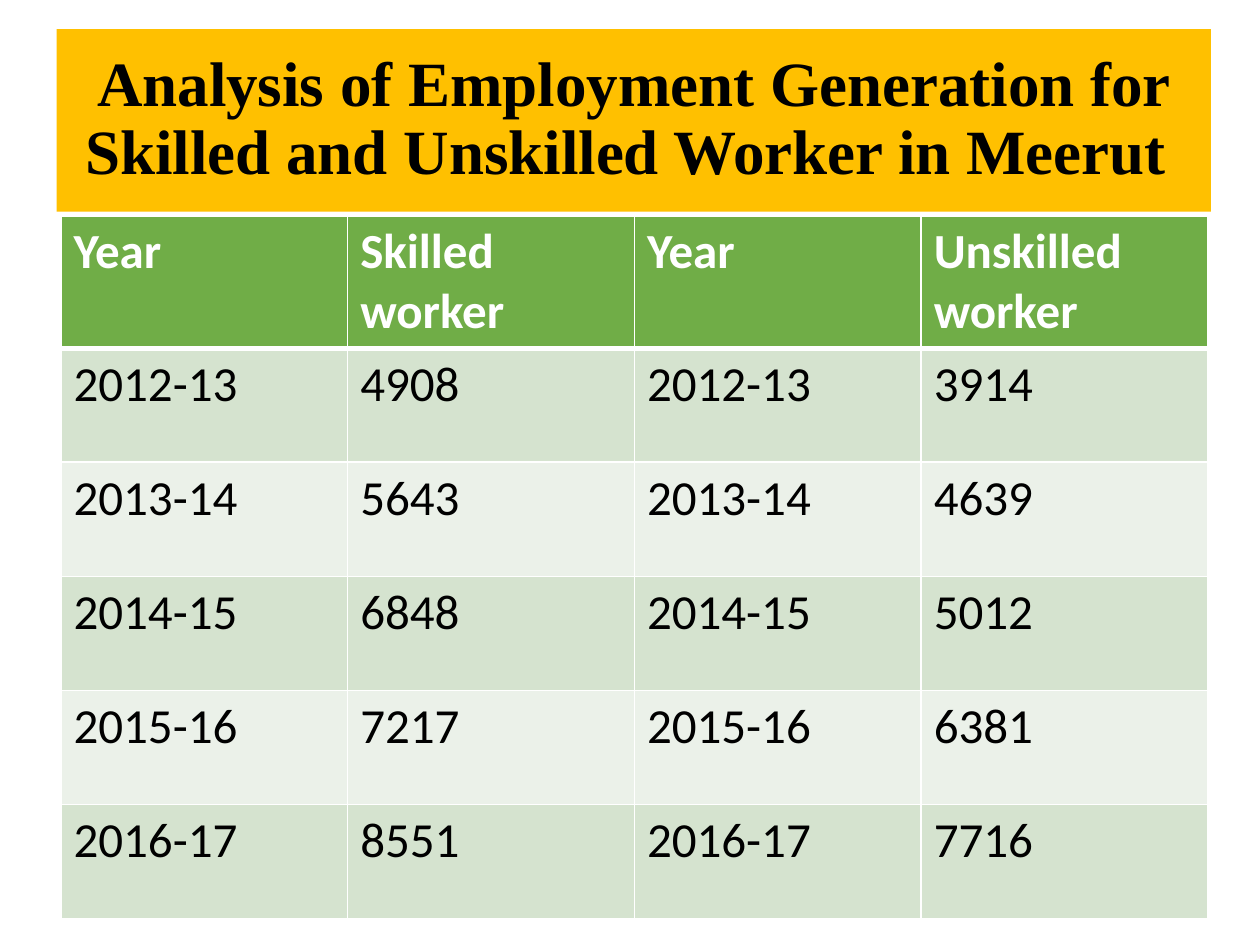
from lxml.etree import SubElement
from pptx import Presentation
from pptx.dml.color import RGBColor
from pptx.enum.shapes import MSO_SHAPE
from pptx.enum.text import MSO_ANCHOR, PP_ALIGN
from pptx.oxml.ns import qn
from pptx.util import Cm, Pt

AMBER = RGBColor(0xFF, 0xC0, 0x00)
GREEN = RGBColor(0x70, 0xAD, 0x47)
BAND_DARK = RGBColor(0xD5, 0xE3, 0xCF)
BAND_LIGHT = RGBColor(0xEB, 0xF1, 0xE9)
BLACK = RGBColor(0x00, 0x00, 0x00)
WHITE = RGBColor(0xFF, 0xFF, 0xFF)

TITLE = "Analysis of Employment Generation for Skilled and Unskilled Worker in Meerut "
HEADINGS = ["Year", "Skilled worker", "Year", "Unskilled worker"]
WORKERS_BY_YEAR = [
    ("2012-13", 4908, 3914),
    ("2013-14", 5643, 4639),
    ("2014-15", 6848, 5012),
    ("2015-16", 7217, 6381),
    ("2016-17", 8551, 7716),
]


class SlideBuilder:
    title_font, title_size = "Times New Roman", Pt(36)
    table_font, table_size = "Calibri", Pt(28)
    thin_line, heavy_line = Pt(1), Pt(3)

    def __init__(self, slide):
        self.slide = slide

    def style_font(self, paragraph, name, size, color, bold):
        font = paragraph.font
        font.name, font.size, font.bold = name, size, bold
        font.color.rgb = color

    def add_title(self, text, left, top, width, height):
        banner = self.slide.shapes.add_shape(MSO_SHAPE.RECTANGLE, left, top, width, height)
        banner.shadow.inherit = False
        banner.fill.solid()
        banner.fill.fore_color.rgb = AMBER
        banner.line.fill.background()
        frame = banner.text_frame
        frame.word_wrap = True
        frame.vertical_anchor = MSO_ANCHOR.MIDDLE
        paragraph = frame.paragraphs[0]
        paragraph.text = text
        paragraph.alignment = PP_ALIGN.CENTER
        paragraph.line_spacing = 0.9
        self.style_font(paragraph, self.title_font, self.title_size, BLACK, True)

    def add_table(self, rows, left, top, column_width, header_height, row_height):
        column_count = len(rows[0])
        height = header_height + row_height * (len(rows) - 1)
        table = self.slide.shapes.add_table(
            len(rows), column_count, left, top, column_width * column_count, height
        ).table
        for column in table.columns:
            column.width = column_width
        for row_index, values in enumerate(rows):
            table.rows[row_index].height = row_height if row_index else header_height
            for column_index, value in enumerate(values):
                self.fill_cell(table.cell(row_index, column_index), str(value), row_index)

    def fill_cell(self, cell, text, row_index):
        is_header = row_index == 0
        self.add_borders(
            cell,
            top=self.heavy_line if row_index == 1 else self.thin_line,
            bottom=self.heavy_line if is_header else self.thin_line,
        )
        band = BAND_DARK if row_index % 2 else BAND_LIGHT
        cell.fill.solid()
        cell.fill.fore_color.rgb = GREEN if is_header else band
        paragraph = cell.text_frame.paragraphs[0]
        paragraph.text = text
        color = WHITE if is_header else BLACK
        self.style_font(paragraph, self.table_font, self.table_size, color, is_header)

    def add_borders(self, cell, top, bottom):
        """Draw white cell edges; call before filling, as the schema wants lines first."""
        properties = cell._tc.get_or_add_tcPr()
        widths = {"lnL": self.thin_line, "lnR": self.thin_line, "lnT": top, "lnB": bottom}
        for edge, width in widths.items():
            line = SubElement(properties, qn(f"a:{edge}"), w=str(int(width)))
            fill = SubElement(line, qn("a:solidFill"))
            SubElement(fill, qn("a:srgbClr"), val=str(WHITE))


def main():
    presentation = Presentation()
    presentation.slide_width, presentation.slide_height = Cm(25.4), Cm(19.05)
    blank_layout = presentation.slide_layouts[6]
    builder = SlideBuilder(presentation.slides.add_slide(blank_layout))

    builder.add_title(TITLE, Cm(1.14), Cm(0.59), Cm(23.27), Cm(3.68))
    rows = [HEADINGS] + [
        (year, skilled, year, unskilled) for year, skilled, unskilled in WORKERS_BY_YEAR
    ]
    builder.add_table(rows, Cm(1.23), Cm(4.35), Cm(5.78), Cm(2.26), Cm(2.3))

    presentation.save("out.pptx")


if __name__ == "__main__":
    main()
